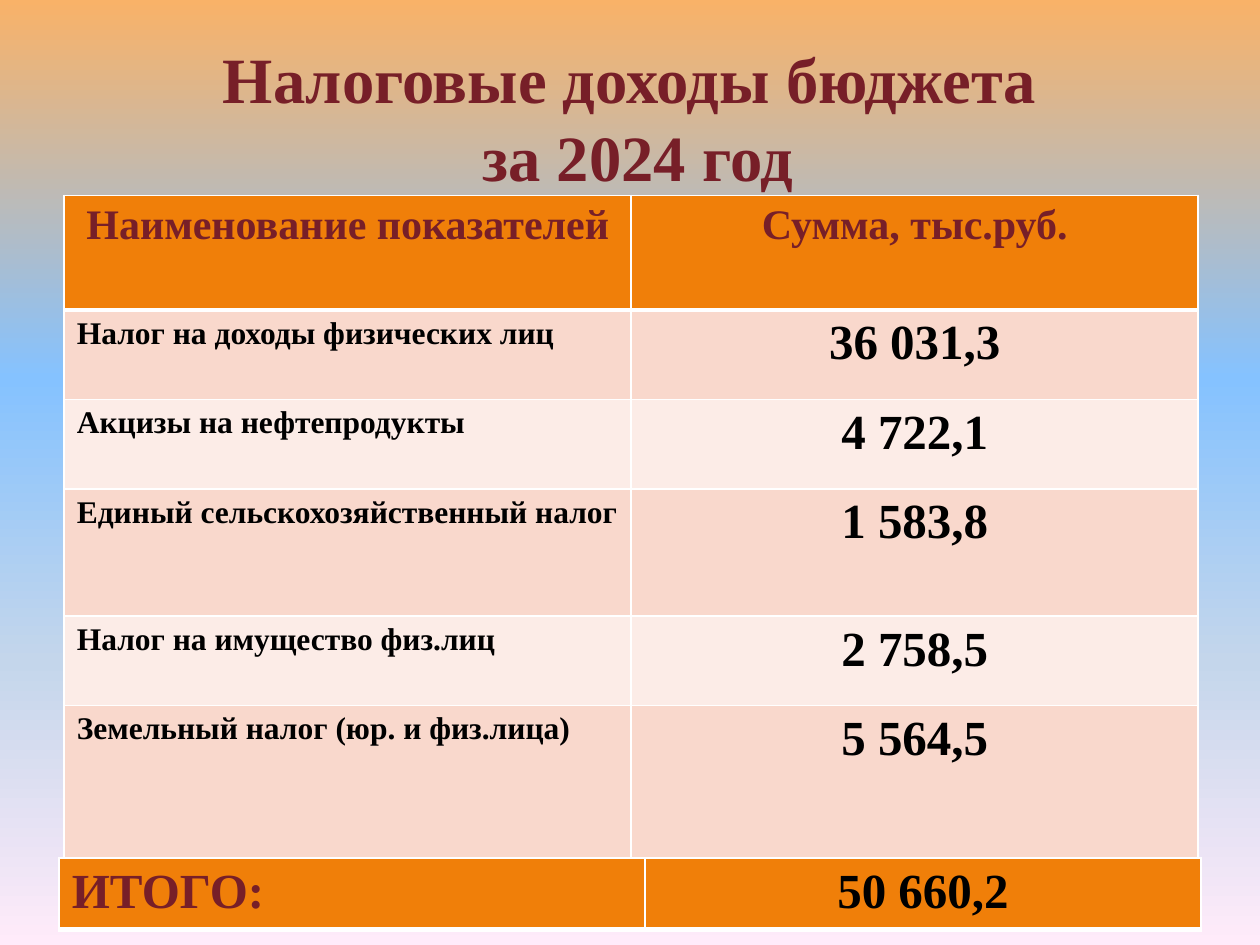
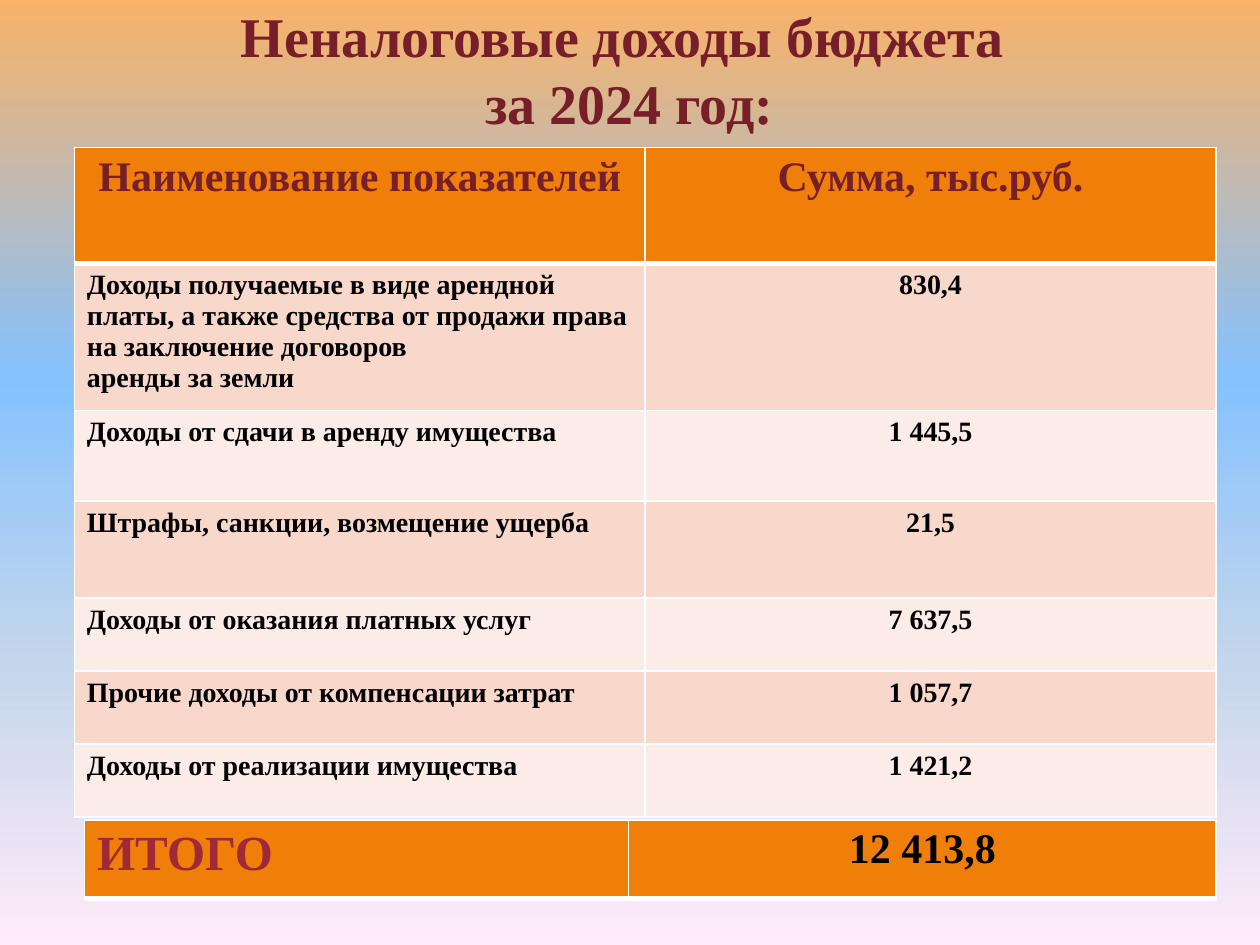
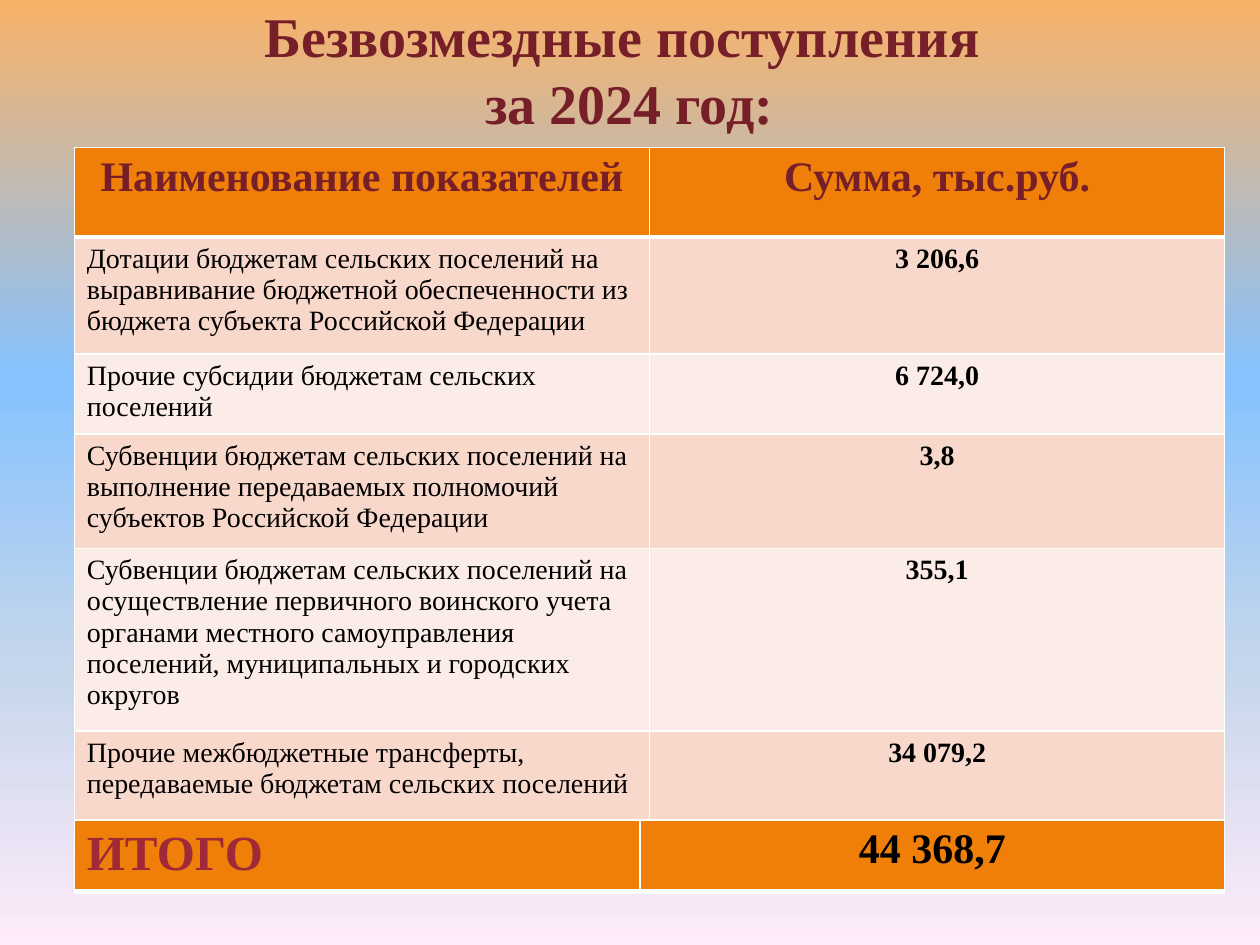
from dataclasses import dataclass

from lxml import etree
from pptx import Presentation
from pptx.dml.color import RGBColor
from pptx.enum.text import MSO_ANCHOR, PP_ALIGN
from pptx.oxml.ns import qn
from pptx.util import Inches, Pt

LEFT, CENTER = PP_ALIGN.LEFT, PP_ALIGN.CENTER
MIDDLE = MSO_ANCHOR.MIDDLE
GRID_COLUMNS, GRID_ROWS = 100, 75
BLANK_LAYOUT = 6


@dataclass(frozen=True)
class Theme:
    """Colours, font, type sizes and line widths shared by the slides."""

    font: str = "Times New Roman"
    heading: str = "771F28"
    total_label: str = "9F2936"
    text: str = "000000"
    accent: str = "F07F09"
    bands: tuple = ("F9D8CC", "FCECE7")
    border: str = "FFFFFF"
    background: tuple = ((0, "F9B268"), (40, "85C2FF"), (70, "C4D6EB"), (100, "FFEBFA"))
    large_title: float = 36.9
    title: float = 32
    total: float = 28
    header: float = 24
    large_body: float = 18
    body: float = 16
    thin: float = 1
    thick: float = 3


@dataclass(frozen=True)
class Box:
    """A region measured in grid columns and rows."""

    left: float
    top: float
    width: float
    height: float


@dataclass(frozen=True)
class Style:
    """Look of the text in one cell or title."""

    size: float
    color: str
    bold: bool = True
    align: int = CENTER


THEME = Theme()
HEADER = Style(THEME.header, THEME.heading)
HEADINGS = ("Наименование показателей", "Сумма, тыс.руб.")


def place(presentation, box):
    """Turn a grid box into slide lengths."""
    column = presentation.slide_width / GRID_COLUMNS
    row = presentation.slide_height / GRID_ROWS
    return [round(length * unit) for length, unit in
            zip((box.left, box.top, box.width, box.height), (column, row, column, row))]


def format_text(text_frame, style):
    """Apply a style to every run of a text frame."""
    for paragraph in text_frame.paragraphs:
        paragraph.alignment = style.align
        for run in paragraph.runs:
            run.font.name = THEME.font
            run.font.size = Pt(style.size)
            run.font.bold = style.bold
            run.font.color.rgb = RGBColor.from_string(style.color)


def add_background(slide):
    """Fill the slide with the vertical gradient of the theme."""
    fill = slide.background.fill
    fill.gradient()
    fill.gradient_angle = 270
    stops = next(slide.element.iter(qn("a:gsLst")))
    for stop in list(stops):
        stops.remove(stop)
    for percent, color in THEME.background:
        stop = etree.SubElement(stops, qn("a:gs"), pos=str(percent * 1000))
        etree.SubElement(stop, qn("a:srgbClr"), val=color)


def add_title(presentation, slide, box, text, size):
    """Add the centred slide title."""
    text_frame = slide.shapes.add_textbox(*place(presentation, box)).text_frame
    text_frame.word_wrap = True
    text_frame.vertical_anchor = MIDDLE
    text_frame.text = text
    format_text(text_frame, Style(size, THEME.heading))


def set_borders(cell, top, bottom):
    """Draw the four sides of a cell."""
    properties = cell._tc.get_or_add_tcPr()
    for side, width in (("L", THEME.thin), ("R", THEME.thin), ("T", top), ("B", bottom)):
        line = etree.SubElement(properties, qn(f"a:ln{side}"), w=str(Pt(width)))
        fill = etree.SubElement(line, qn("a:solidFill"))
        etree.SubElement(fill, qn("a:srgbClr"), val=THEME.border)


def fill_cell(cell, text, style, color, top, bottom):
    """Set the text, borders and fill of a cell."""
    cell.text_frame.text = text
    format_text(cell.text_frame, style)
    set_borders(cell, top, bottom)
    cell.fill.solid()
    cell.fill.fore_color.rgb = RGBColor.from_string(color)


def add_grid_table(presentation, slide, box, columns, rows):
    """Add an unstyled table with column widths and row heights in grid units."""
    frame = slide.shapes.add_table(len(rows), len(columns), *place(presentation, box))
    table = frame.table
    table.first_row = table.horz_banding = False
    for column, width in zip(table.columns, columns):
        column.width = round(presentation.slide_width * width / GRID_COLUMNS)
    for row, height in zip(table.rows, rows):
        row.height = round(presentation.slide_height * height / GRID_ROWS)
    return table


def add_income_table(presentation, slide, box, heights, records, styles):
    """Add the header and the banded rows of income items."""
    table = add_grid_table(presentation, slide, box, [box.width / 2] * 2, heights)
    for column, heading in enumerate(HEADINGS):
        fill_cell(table.cell(0, column), heading, HEADER, THEME.accent, THEME.thin, THEME.thick)
    for row, record in enumerate(records, 1):
        top = THEME.thick if row == 1 else THEME.thin
        color = THEME.bands[(row - 1) % 2]
        for column, (text, style) in enumerate(zip(record, styles)):
            fill_cell(table.cell(row, column), text, style, color, top, THEME.thin)


def add_total_table(presentation, slide, box, label_width, record, styles):
    """Add the one-row table with the total."""
    columns = (label_width, box.width - label_width)
    table = add_grid_table(presentation, slide, box, columns, [box.height])
    for column, (text, style) in enumerate(zip(record, styles)):
        fill_cell(table.cell(0, column), text, style, THEME.accent, THEME.thin, THEME.thick)


def add_income_slide(presentation, title, income, total):
    """Add a slide made of a title, an income table and a total."""
    slide = presentation.slides.add_slide(presentation.slide_layouts[BLANK_LAYOUT])
    add_background(slide)
    add_title(presentation, slide, *title)
    add_income_table(presentation, slide, *income)
    add_total_table(presentation, slide, *total)


def add_tax_slide(presentation):
    """Add the tax income slide."""
    records = (
        ("Налог на доходы физических лиц", "36 031,3"),
        ("Акцизы на нефтепродукты", "4 722,1"),
        ("Единый сельскохозяйственный налог", "1 583,8"),
        ("Налог на имущество физ.лиц", "2 758,5"),
        ("Земельный налог (юр. и физ.лица)", "5 564,5"),
    )
    styles = (Style(THEME.large_body, THEME.text, align=LEFT), Style(THEME.total, THEME.text))
    total_styles = (Style(THEME.total, THEME.heading, align=LEFT), Style(THEME.total, THEME.text))
    add_income_slide(
        presentation,
        (Box(5, 3, 90, 12.5), "Налоговые доходы бюджета\v за 2024 год", THEME.large_title),
        (Box(5.1, 15.5, 90, 53.5), (9.1, 7.1, 7.1, 10.1, 7.1, 13.1), records, styles),
        (Box(4.7, 68.1, 90.6, 4.7), 46.5, ("ИТОГО:", "50 660,2"), total_styles),
    )


def add_plain_slide(presentation, title, income, total, bold_labels):
    """Add a slide with the smaller title and body text."""
    styles = (Style(THEME.body, THEME.text, bold_labels, LEFT), Style(THEME.body, THEME.text))
    total_styles = (Style(THEME.total, THEME.total_label, align=LEFT),
                    Style(THEME.header, THEME.text))
    add_income_slide(
        presentation,
        (Box(5, 0, 88.8, 10.9), title, THEME.title),
        (*income, styles),
        (*total, total_styles),
    )


def add_non_tax_slide(presentation):
    """Add the non-tax income slide."""
    records = (
        ("Доходы получаемые в виде арендной платы, а также средства от продажи права "
         "на заключение договоров\nаренды за земли", "830,4"),
        ("Доходы от сдачи в аренду имущества", "1 445,5"),
        ("Штрафы, санкции, возмещение ущерба", "21,5"),
        ("Доходы от оказания платных услуг", "7 637,5"),
        ("Прочие доходы от компенсации затрат", "1 057,7"),
        ("Доходы от реализации имущества", "1 421,2"),
    )
    add_plain_slide(
        presentation,
        "Неналоговые доходы бюджета\v за 2024 год:",
        (Box(5.9, 11.7, 90.6, 52.6), (9.2, 11.1, 7.2, 7.7, 5.8, 5.8, 5.8), records),
        (Box(6.7, 65.1, 89.8, 6.2), 43.2, ("ИТОГО", "12 413,8")),
        True,
    )


def add_transfers_slide(presentation):
    """Add the gratuitous receipts slide."""
    records = (
        ("Дотации бюджетам сельских поселений на выравнивание бюджетной обеспеченности "
         "из бюджета субъекта Российской Федерации", "3 206,6"),
        ("Прочие субсидии бюджетам сельских поселений", "6 724,0"),
        ("Субвенции бюджетам сельских поселений на выполнение передаваемых полномочий "
         "субъектов Российской Федерации", "3,8"),
        ("Субвенции бюджетам сельских поселений на осуществление первичного воинского учета "
         "органами местного самоуправления поселений, муниципальных и городских округов", "355,1"),
        ("Прочие межбюджетные трансферты, передаваемые бюджетам сельских поселений", "34 079,2"),
    )
    add_plain_slide(
        presentation,
        "Безвозмездные поступления\v за 2024 год:",
        (Box(5.9, 11.7, 91.3, 53.5), (7.1, 9.3, 6.2, 9.1, 14.5, 7.3), records),
        (Box(5.9, 65.1, 91.3, 4.9), 44.9, ("ИТОГО", "44 368,7")),
        False,
    )


def main():
    """Build and save the presentation."""
    presentation = Presentation()
    presentation.slide_width, presentation.slide_height = Inches(10), Inches(7.5)
    add_tax_slide(presentation)
    add_non_tax_slide(presentation)
    add_transfers_slide(presentation)
    presentation.save("out.pptx")


if __name__ == "__main__":
    main()
